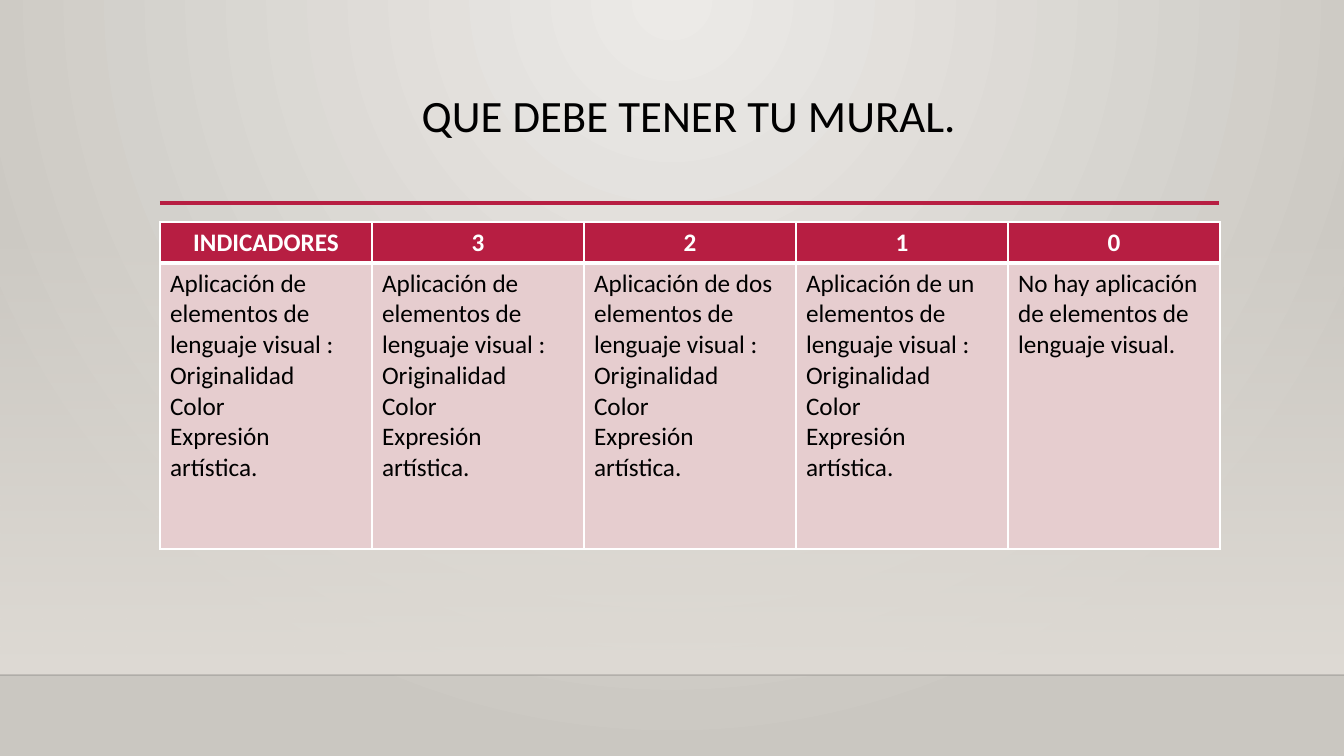
"""Slide with the grading rubric for a school mural."""
from lxml import etree
from pptx import Presentation
from pptx.dml.color import RGBColor
from pptx.enum.shapes import MSO_CONNECTOR as Connector, MSO_SHAPE as Shape
from pptx.enum.text import MSO_ANCHOR as Anchor, PP_ALIGN as Align
from pptx.oxml import parse_xml
from pptx.oxml.ns import nsdecls, qn
from pptx.util import Emu, Pt

SCALE = 914400 / 100.8
FONT = "Calibri"
COLORS = {
    "light": "ECEAE7", "dark": "CAC7C1", "band": "DFDBD5", "floor": "000001",
    "accent": "B71E42", "body": "E6CDCF", "white": "FFFFFF", "black": "000000",
}
HEADERS = ["INDICADORES", "3", "2", "1", "0"]
CRITERIA = ["Originalidad", "Color", "Expresión artística."]
OPENINGS = ["Aplicación de elementos", "Aplicación de elementos",
            "Aplicación de dos elementos", "Aplicación de un elementos"]
BODIES = [[f"{opening} de lenguaje visual :"] + CRITERIA for opening in OPENINGS]
BODIES.append(["No hay aplicación de elementos de lenguaje visual."])


def px(length):
    return Emu(round(length * SCALE))


def set_gradient(element, stops, direction):
    gradient = element.find(".//" + qn("a:gradFill"))
    stop_xml = "".join(
        f'<a:gs pos="{position}"><a:srgbClr val="{COLORS[name]}">'
        f'<a:alpha val="{alpha}"/></a:srgbClr></a:gs>'
        for position, name, alpha in stops)
    gradient.getparent().replace(gradient, parse_xml(
        f'<a:gradFill {nsdecls("a")} rotWithShape="1">'
        f'<a:gsLst>{stop_xml}</a:gsLst>{direction}</a:gradFill>'))


deck = Presentation()
deck.slide_width, deck.slide_height = px(1344), px(756)
page = deck.slides.add_slide(deck.slide_layouts[6])

page.background.fill.gradient()
set_gradient(page.element, [(0, "light", 100000), (100000, "dark", 100000)],
             '<a:path path="circle"><a:fillToRect l="43000" r="43000" b="100000"/></a:path>')

band = page.shapes.add_shape(Shape.RECTANGLE, px(0), px(223), px(1344), px(452))
band.shadow.inherit = False
band.line.fill.background()
band.fill.gradient()
set_gradient(band.element, [(0, "band", 0), (100000, "band", 100000)],
             '<a:lin ang="5400000" scaled="0"/>')

for left, right, top, name, width, alpha in [
        (0, 1344, 675, "floor", 1, 20000), (160, 1219, 203, "accent", 2.5, 100000)]:
    rule = page.shapes.add_connector(Connector.STRAIGHT, px(left), px(top), px(right), px(top))
    rule.line.color.rgb = RGBColor.from_string(COLORS[name])
    rule.line.width = Pt(width)
    tint = rule.element.find(".//" + qn("a:srgbClr"))
    etree.SubElement(tint, qn("a:alpha")).set("val", str(alpha))
    etree.SubElement(rule.element.spPr, qn("a:effectLst"))

title = page.shapes.add_textbox(px(160), px(89), px(1058), px(116))
title.text_frame.word_wrap = True
title.text_frame.vertical_anchor = Anchor.TOP
para = title.text_frame.paragraphs[0]
para.alignment = Align.CENTER
para.line_spacing = 0.9
span = para.add_run()
span.text = "QUE DEBE TENER TU MURAL."
span.font.name, span.font.size = FONT, Pt(32)
span.font.color.rgb = RGBColor.from_string(COLORS["black"])

rubric = page.shapes.add_table(2, 5, px(160), px(222), px(1060), px(327)).table
for column in rubric.columns:
    column.width = px(212)
rubric.rows[0].height, rubric.rows[1].height = px(41), px(286)

rows = [
    ([[header] for header in HEADERS], "accent", "white", Align.CENTER, {"lnB": 3}),
    (BODIES, "body", "black", Align.LEFT, {"lnT": 3}),
]
for row_index, (entries, fill, ink, alignment, thick) in enumerate(rows):
    for column_index, lines in enumerate(entries):
        cell = rubric.cell(row_index, column_index)
        properties = cell._tc.get_or_add_tcPr()
        for side in ["lnL", "lnR", "lnT", "lnB"]:
            properties.append(parse_xml(
                f'<a:{side} {nsdecls("a")} w="{Pt(thick.get(side, 1))}"><a:solidFill>'
                f'<a:srgbClr val="{COLORS["white"]}"/></a:solidFill></a:{side}>'))
        cell.fill.solid()
        cell.fill.fore_color.rgb = RGBColor.from_string(COLORS[fill])
        frame = cell.text_frame
        for line_index, line in enumerate(lines):
            para = frame.add_paragraph() if line_index else frame.paragraphs[0]
            para.alignment = alignment
            span = para.add_run()
            span.text = line
            span.font.name, span.font.size = FONT, Pt(18)
            span.font.bold = row_index == 0
            span.font.color.rgb = RGBColor.from_string(COLORS[ink])

deck.save("out.pptx")
